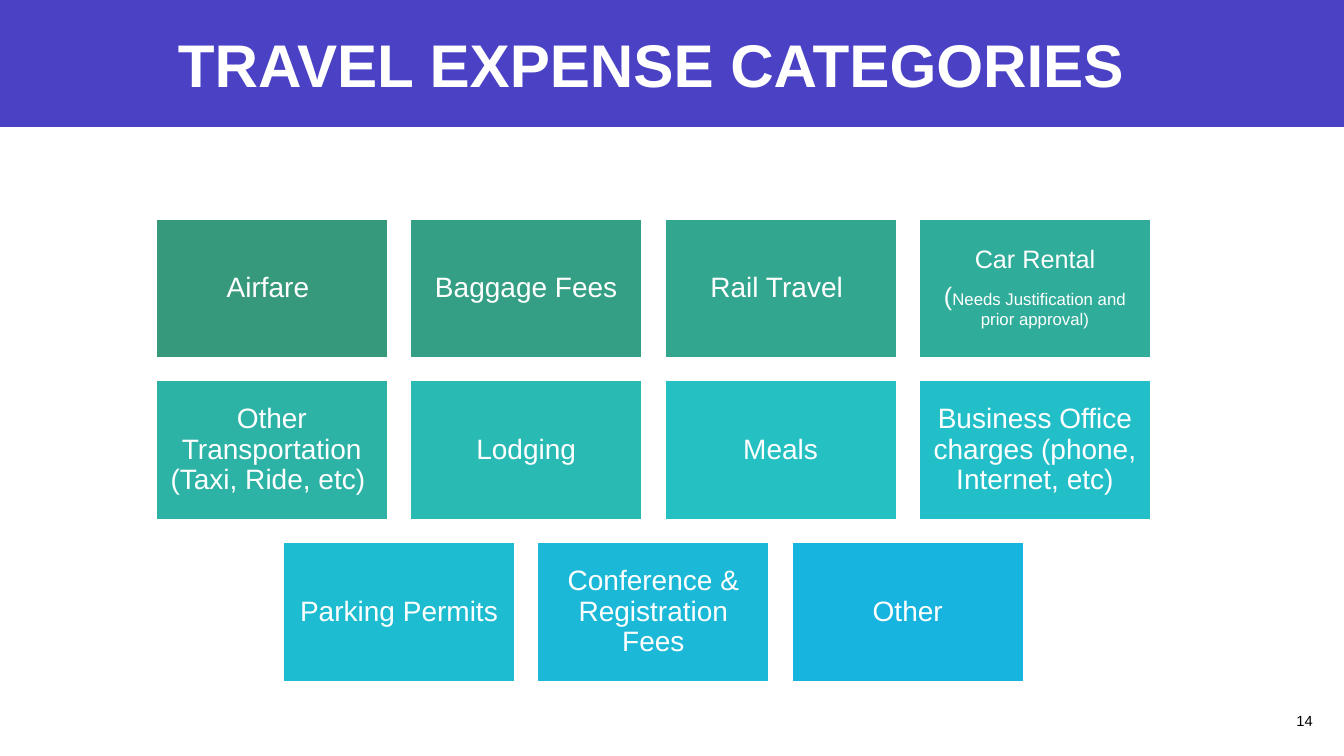
import pptx
import pptx.util
import pptx.dml.color
import pptx.enum.shapes
import pptx.enum.text
from dataclasses import dataclass

Pt = pptx.util.Pt
Align = pptx.enum.text.PP_ALIGN
Anchor = pptx.enum.text.MSO_ANCHOR


@dataclass(frozen=True)
class Theme:
    font: str = "Arial"
    banner: str = "4A41C5"
    light: str = "FFFFFF"
    dark: str = "000000"
    title_size: float = 43
    tile_size: float = 20
    rental_size: float = 18
    note_size: float = 12
    number_size: float = 10.5


@dataclass(frozen=True)
class Box:
    left: float
    top: float
    width: float
    height: float

    def lengths(self):
        return Pt(self.left), Pt(self.top), Pt(self.width), Pt(self.height)


THEME = Theme()

TILE_ROWS = [
    [
        ("37997B", [[("Airfare ", THEME.tile_size)]]),
        ("349F84", [[("Baggage Fees", THEME.tile_size)]]),
        ("32A68E", [[("Rail Travel ", THEME.tile_size)]]),
        ("2FAD9A", [
            [("Car Rental", THEME.rental_size)],
            [("(", THEME.rental_size),
             ("Needs Justification and prior approval)", THEME.note_size)],
        ]),
    ],
    [
        ("2CB3A6", [[("Other Transportation (Taxi, Ride, etc) ", THEME.tile_size)]]),
        ("29BAB4", [[("Lodging", THEME.tile_size)]]),
        ("25C0C1", [[("Meals", THEME.tile_size)]]),
        ("22BFC9", [[("Business Office charges (phone, Internet, etc)", THEME.tile_size)]]),
    ],
    [
        ("1EBCD0", [[("Parking Permits", THEME.tile_size)]]),
        ("1BB9D7", [[("Conference & Registration Fees", THEME.tile_size)]]),
        ("17B4DF", [[("Other", THEME.tile_size)]]),
    ],
]


def rgb(color):
    return pptx.dml.color.RGBColor.from_string(color)


def add_span(para, text, size, color, bold=False):
    span = para.add_run()
    span.text = text
    span.font.name = THEME.font
    span.font.size = Pt(size)
    span.font.bold = bold
    span.font.color.rgb = rgb(color)


def add_rectangle(page, box, fill, line=None):
    shape = page.shapes.add_shape(
        pptx.enum.shapes.MSO_SHAPE.RECTANGLE, *box.lengths())
    shape.shadow.inherit = False
    shape.fill.solid()
    shape.fill.fore_color.rgb = rgb(fill)
    if line:
        shape.line.color.rgb = rgb(line)
        shape.line.width = Pt(1)
    else:
        shape.line.fill.background()
    return shape


def add_label(page, box, text, size, color, align, anchor, bold=False):
    frame = page.shapes.add_textbox(*box.lengths()).text_frame
    frame.word_wrap = True
    frame.vertical_anchor = anchor
    para = frame.paragraphs[0]
    para.alignment = align
    add_span(para, text, size, color, bold)


def add_banner(page, box):
    add_rectangle(page, box, THEME.banner)
    title = Box(box.left + 120, box.top + 16, 693, 59)
    add_label(page, title, "TRAVEL EXPENSE CATEGORIES", THEME.title_size,
              THEME.light, Align.LEFT, Anchor.TOP, bold=True)


def add_tile(page, box, fill, paragraphs):
    frame = add_rectangle(page, box, fill, THEME.light).text_frame
    frame.word_wrap = True
    frame.vertical_anchor = Anchor.MIDDLE
    frame.margin_left = frame.margin_right = Pt(6)
    frame.margin_top = frame.margin_bottom = Pt(6)
    for index, spans in enumerate(paragraphs):
        para = frame.add_paragraph() if index else frame.paragraphs[0]
        para.alignment = Align.CENTER
        para.line_spacing = 0.9
        if index < len(paragraphs) - 1:
            para.space_after = Pt(7)
        for text, size in spans:
            add_span(para, text, size, THEME.light)


def add_tile_grid(page, box, gap):
    columns = max(len(row) for row in TILE_ROWS)
    width = (box.width - gap * (columns - 1)) / columns
    height = (box.height - gap * (len(TILE_ROWS) - 1)) / len(TILE_ROWS)
    for row_index, row in enumerate(TILE_ROWS):
        left = box.left + (columns - len(row)) * (width + gap) / 2
        top = box.top + row_index * (height + gap)
        for column, (fill, paragraphs) in enumerate(row):
            tile = Box(left + column * (width + gap), top, width, height)
            add_tile(page, tile, fill, paragraphs)


def add_page_number(page, box):
    add_label(page, box, "14", THEME.number_size, THEME.dark,
              Align.RIGHT, Anchor.MIDDLE)


def main():
    deck = pptx.Presentation()
    deck.slide_width, deck.slide_height = Pt(960), Pt(540)
    page = deck.slides.add_slide(deck.slide_layouts[6])
    add_banner(page, Box(0, 0, 960, 90.7))
    add_tile_grid(page, Box(111.6, 156.4, 710.3, 330.3), 16.5)
    add_page_number(page, Box(895, 500.4, 49.7, 28.8))
    deck.save("out.pptx")


if __name__ == "__main__":
    main()
